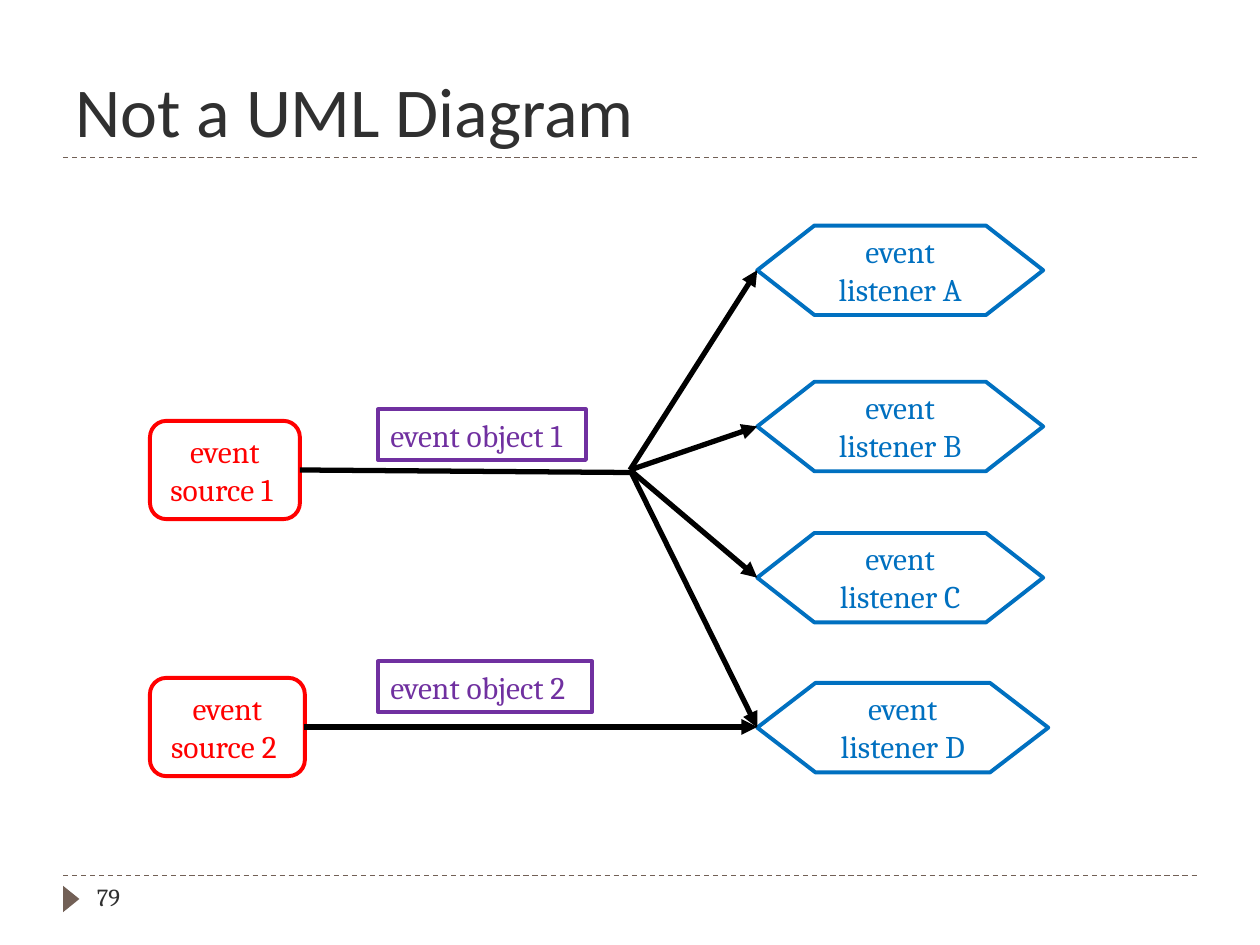
from dataclasses import dataclass

from lxml import etree
from pptx import Presentation
from pptx.dml.color import RGBColor
from pptx.enum.dml import MSO_LINE
from pptx.enum.shapes import MSO_CONNECTOR, MSO_SHAPE
from pptx.enum.text import MSO_ANCHOR, PP_ALIGN
from pptx.oxml.ns import qn
from pptx.util import Inches, Pt

STRAIGHT = MSO_CONNECTOR.STRAIGHT
DASH = MSO_LINE.DASH
SOURCE_SHAPE = MSO_SHAPE.ROUNDED_RECTANGLE
LISTENER_SHAPE = MSO_SHAPE.FLOWCHART_PREPARATION
OBJECT_SHAPE = MSO_SHAPE.FLOWCHART_PROCESS
TRIANGLE = MSO_SHAPE.ISOSCELES_TRIANGLE
TOP, BOTTOM = MSO_ANCHOR.TOP, MSO_ANCHOR.BOTTOM
LEFT, CENTER = PP_ALIGN.LEFT, PP_ALIGN.CENTER


@dataclass(frozen=True)
class Theme:
    title_font: str = "Calibri"
    body_font: str = "Cambria"
    title_size: int = 40
    body_size: int = 18
    number_size: int = 14
    ink: str = "303030"
    rule: str = "726056"
    source: str = "FF0000"
    listener: str = "0070C0"
    event_object: str = "7030A0"
    arrow: str = "000000"


theme = Theme()


def add_line(start, end, color, width, arrow=False):
    line = slide.shapes.add_connector(
        STRAIGHT, *(Inches(value) for value in (*start, *end)))
    line.line.color.rgb = RGBColor.from_string(color)
    line.line.width = Pt(width)
    properties = line._element.spPr
    if arrow:
        etree.SubElement(properties.find(qn("a:ln")), qn("a:tailEnd"), type="triangle")
    etree.SubElement(properties, qn("a:effectLst"))
    return line


def write(shape, text, font, size, color, align=LEFT, anchor=TOP, wrap=True):
    frame = shape.text_frame
    frame.text = text
    frame.word_wrap = wrap
    frame.vertical_anchor = anchor
    for paragraph in frame.paragraphs:
        paragraph.alignment = align
        for run in paragraph.runs:
            run.font.name = font
            run.font.size = Pt(size)
            run.font.color.rgb = RGBColor.from_string(color)


prs = Presentation()
prs.slide_width, prs.slide_height = Inches(10), Inches(7.5)
slide = prs.slides.add_slide(prs.slide_layouts[5])

# Frame of the slide
for rule_y in (1.25, 6.95):
    rule = add_line((0.5, rule_y), (9.5, rule_y), theme.rule, 0.75)
    rule.line.dash_style = DASH

marker = slide.shapes.add_shape(
    TRIANGLE, Inches(0.46), Inches(7.07), Inches(0.21), Inches(0.13))
marker.rotation = 90
marker.shadow.inherit = False
marker.fill.solid()
marker.fill.fore_color.rgb = RGBColor.from_string(theme.rule)
marker.line.fill.background()

title = slide.shapes.title
title.left, title.top = Inches(0.5), Inches(0.25)
title.width, title.height = Inches(9), Inches(1)
write(title, "Not a UML Diagram", theme.title_font, theme.title_size, theme.ink,
      anchor=BOTTOM)

page_number = slide.shapes.add_textbox(
    Inches(0.67), Inches(6.95), Inches(2.17), Inches(0.4))
write(page_number, "79", theme.body_font, theme.number_size, theme.ink)

# Sources, listeners and event objects
source_x, listener_x, object_x = 1.19, 6.01, 3
source_height, listener_height, object_height = 0.78, 0.71, 0.4
source_boxes = [("1", 3.34, 1.19), ("2", 5.38, 1.23)]
listener_boxes = [("A", 1.79, 2.27), ("B", 3.03, 2.27),
                  ("C", 4.23, 2.27), ("D", 5.42, 2.31)]
object_boxes = [("1", 3.25, 1.65), ("2", 5.25, 1.7)]

groups = [
    (SOURCE_SHAPE, "event\nsource {} ", source_x, source_height,
     theme.source, CENTER, False, source_boxes),
    (LISTENER_SHAPE, "event\n listener {} ", listener_x, listener_height,
     theme.listener, CENTER, False, listener_boxes),
    (OBJECT_SHAPE, "event object {}", object_x, object_height,
     theme.event_object, LEFT, True, object_boxes),
]
for outline, label, x, height, color, align, wrap, boxes in groups:
    for key, y, width in boxes:
        node = slide.shapes.add_shape(
            outline, Inches(x), Inches(y), Inches(width), Inches(height))
        node.shadow.inherit = False
        node.fill.background()
        node.line.color.rgb = RGBColor.from_string(color)
        node.line.width = Pt(2.25)
        write(node, label.format(key), theme.body_font, theme.body_size, color,
              align, wrap=wrap)

# Source 1 fans out to every listener, source 2 reaches only the last
fork = (5, 3.73)
add_line((2.38, 3.73), (5, 3.75), theme.arrow, 3)
for key, y, width in listener_boxes:
    add_line(fork, (listener_x, y + listener_height / 2), theme.arrow, 3, arrow=True)
add_line((2.41, 5.77), (listener_x, 5.77), theme.arrow, 3, arrow=True)

prs.save("out.pptx")
